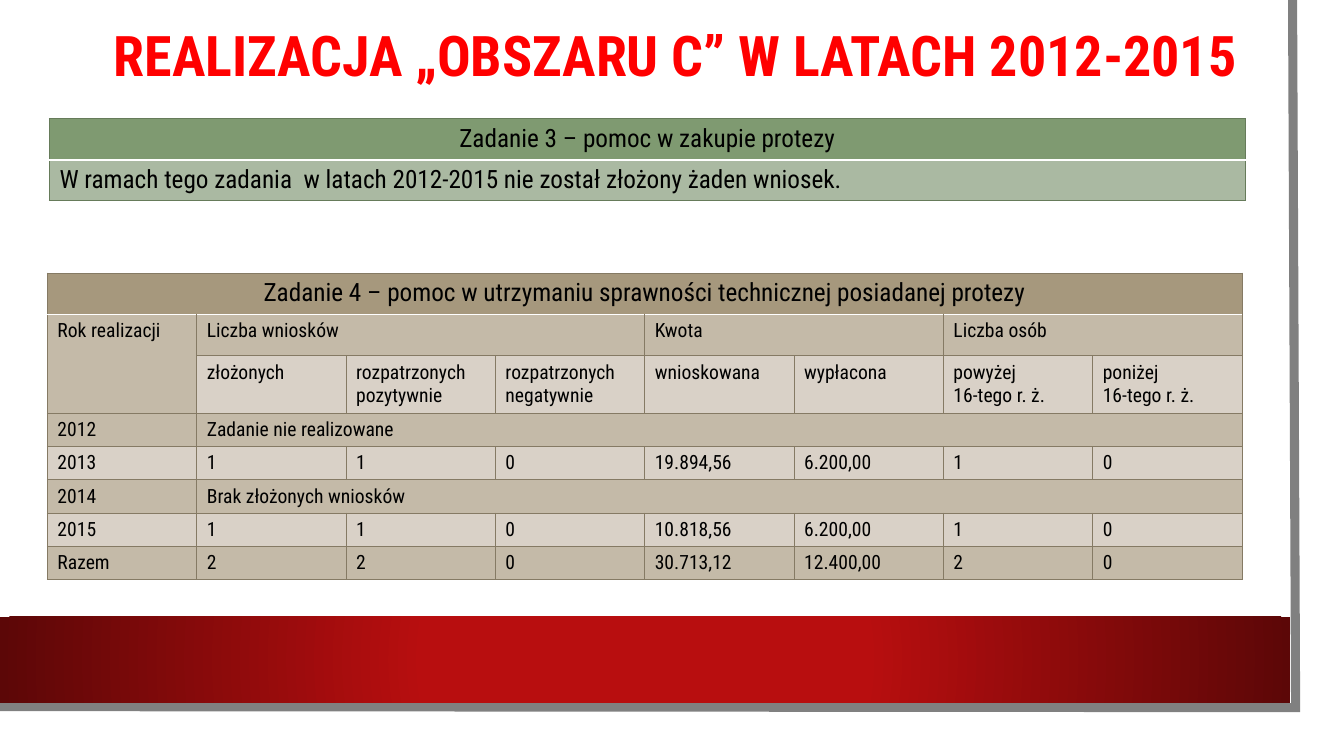
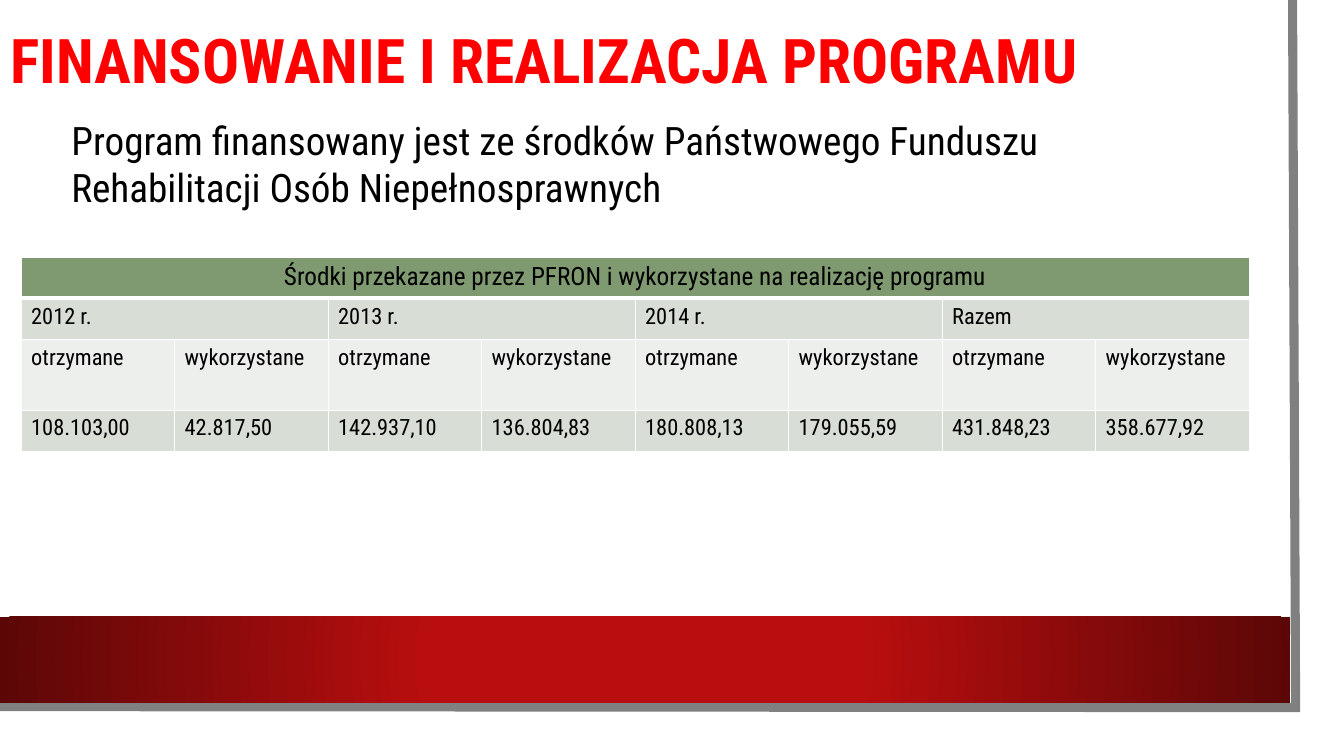
"""Build two slides on the funding and delivery of a rehabilitation programme."""
from dataclasses import dataclass
from typing import Optional

from lxml import etree
from pptx import Presentation
from pptx import slide as sl
from pptx import table as tb
from pptx import text as txt
from pptx import util as u
from pptx.dml import color as clr
from pptx.enum import shapes as shp
from pptx.enum import text as te
from pptx.oxml import ns

Inches = u.Inches
FONT = "Roboto Condensed"
COLORS = {
    "white": "FFFFFF",
    "black": "000000",
    "title": "FF0000",
    "frame": "808080",
    "band": "B80E0F",
    "band_edge": "5C0707",
    "green": "7F9A71",
    "green_line": "667B5A",
    "green_mid": "AAB9A2",
    "green_light": "D8DED5",
    "green_pale": "ECEFEB",
    "sand": "A6987D",
    "sand_line": "857A64",
    "sand_mid": "C4BAA8",
    "sand_light": "D9D1C7",
}

Row = tuple[Optional[str], ...]


@dataclass(frozen=True)
class Box:
    left: float
    top: float
    width: float
    height: float

    def lengths(self) -> tuple[int, ...]:
        return tuple(Inches(v) for v in (self.left, self.top, self.width, self.height))


@dataclass(frozen=True)
class TableSpec:
    """Rows of a table; None continues the cell to the left, or above in the first column."""
    box: Box
    row_heights: tuple[float, ...]
    rows: tuple[Row, ...]
    row_fills: tuple[str, ...]
    border: str
    border_width: float
    header_rule: float
    body_size: int


def rgb(name: str) -> clr.RGBColor:
    return clr.RGBColor.from_string(COLORS[name])


def put_text(frame, content: str, *, size: int, color: str = "black", bold: bool = False,
             align: te.PP_ALIGN = te.PP_ALIGN.LEFT, spacing: Optional[float] = None) -> None:
    frame.word_wrap = True
    frame.text = content
    for paragraph in frame.paragraphs:
        paragraph.alignment = align
        if spacing:
            paragraph.line_spacing = spacing
        for run in paragraph.runs:
            font = run.font
            font.name, font.size, font.bold = FONT, u.Pt(size), bold
            font.color.rgb = rgb(color)


def add_panel(slide: sl.Slide, box: Box):
    panel = slide.shapes.add_shape(shp.MSO_SHAPE.RECTANGLE, *box.lengths())
    panel.shadow.inherit = False
    panel.line.fill.background()
    return panel


def add_frame_line(slide: sl.Slide):
    start, *rest = [(Inches(x), Inches(y)) for x, y in ((12.82, 0), (12.85, 7.02), (-0.03, 7.01))]
    builder = slide.shapes.build_freeform(*start)
    builder.add_line_segments(rest, close=False)
    edge = builder.convert_to_shape()
    edge.shadow.inherit = False
    edge.fill.background()
    edge.line.color.rgb = rgb("frame")
    edge.line.width = u.Pt(6.5)
    outline = edge.element.spPr.find(ns.qn("a:ln"))
    etree.SubElement(outline, ns.qn("a:miter"), lim="800000")
    return edge


def shade_radially(panel, inner: str, outer: str, inner_stop: float) -> None:
    panel.fill.gradient()
    for stop, name, position in zip(panel.fill.gradient_stops, (inner, outer), (inner_stop, 1.0)):
        stop.color.rgb = rgb(name)
        stop.position = position
    gradient = panel.element.spPr.find(ns.qn("a:gradFill"))
    linear = gradient.find(ns.qn("a:lin"))
    radial = etree.Element(ns.qn("a:path"), path="circle")
    etree.SubElement(radial, ns.qn("a:fillToRect"), l="50000", t="50000", r="50000", b="50000")
    gradient.replace(linear, radial)


def decorate_layout(layout: sl.SlideLayout, slide: sl.Slide) -> None:
    page = add_panel(slide, Box(0, 0, 13.1, 7.27))
    page.fill.solid()
    page.fill.fore_color.rgb = rgb("white")
    edge = add_frame_line(slide)
    band = add_panel(slide, Box(0, 6.12, 12.8, 0.85))
    shade_radially(band, "band", "band_edge", 0.34)
    for number, part in enumerate((page, edge, band), start=100):
        part.element.nvSpPr.cNvPr.set("id", str(number))
        layout.shapes.element.append(part.element)


def set_title(slide: sl.Slide, content: str, box: Box, size: int,
              spacing: Optional[float] = None) -> None:
    title = slide.shapes.title
    title.left, title.top, title.width, title.height = box.lengths()
    frame = title.text_frame
    frame.auto_size = te.MSO_AUTO_SIZE.NONE
    frame.vertical_anchor = te.MSO_ANCHOR.MIDDLE
    put_text(frame, content, size=size, color="title", bold=True, spacing=spacing)


def set_borders(cell: tb._Cell, sides: dict[str, tuple[str, float]]) -> None:
    properties = cell._tc.get_or_add_tcPr()
    for index, (side, (name, width)) in enumerate(sides.items()):
        line = etree.Element(ns.qn(f"a:ln{side}"), w=str(u.Pt(width)))
        fill = etree.SubElement(line, ns.qn("a:solidFill"))
        etree.SubElement(fill, ns.qn("a:srgbClr"), val=COLORS[name])
        properties.insert(index, line)


def merge_cells(table: tb.Table, rows: tuple[Row, ...]) -> None:
    for r, row in enumerate(rows):
        if row[0] is None:
            table.cell(r - 1, 0).merge(table.cell(r, 0))
        starts = [c for c, content in enumerate(row) if c == 0 or content is not None]
        for start, end in zip(starts, starts[1:] + [len(row)]):
            if end - start > 1:
                table.cell(r, start).merge(table.cell(r, end - 1))


def add_table(slide: sl.Slide, spec: TableSpec) -> None:
    columns = len(spec.rows[0])
    table = slide.shapes.add_table(len(spec.rows), columns, *spec.box.lengths()).table
    table.first_row = table.horz_banding = False
    for column in table.columns:
        column.width = Inches(spec.box.width / columns)
    plain = (spec.border, spec.border_width)
    rule = ("white", spec.header_rule)
    for r, row in enumerate(spec.rows):
        table.rows[r].height = Inches(spec.row_heights[r])
        for c, content in enumerate(row):
            cell = table.cell(r, c)
            cell.fill.solid()
            cell.fill.fore_color.rgb = rgb(spec.row_fills[r])
            set_borders(cell, {"L": plain, "R": plain, "T": rule if r == 1 else plain,
                               "B": rule if r == 0 else plain})
            if content is not None:
                put_text(cell.text_frame, content, size=spec.body_size if r else 18,
                         align=te.PP_ALIGN.LEFT if r else te.PP_ALIGN.CENTER)
    merge_cells(table, spec.rows)


def spread(*contents: str, span: int) -> Row:
    return tuple(part for content in contents for part in (content, *[None] * (span - 1)))


PROSTHESIS_PURCHASE = TableSpec(
    box=Box(0.49, 1.18, 11.86, 0.81),
    row_heights=(0.41, 0.4),
    rows=(("Zadanie 3 – pomoc w zakupie protezy",),
          ("W ramach tego zadania  w latach 2012-2015 nie został złożony żaden wniosek.",)),
    row_fills=("green", "green_mid"),
    border="green_line", border_width=0.75, header_rule=1.5, body_size=18,
)

PROSTHESIS_UPKEEP = TableSpec(
    box=Box(0.47, 2.71, 11.85, 3.04),
    row_heights=(0.41, 0.41, 0.57) + (0.33,) * 5,
    rows=(
        spread("Zadanie 4 – pomoc w utrzymaniu sprawności technicznej posiadanej protezy", span=8),
        ("Rok realizacji", *spread("Liczba wniosków", span=3),
         *spread("Kwota", "Liczba osób", span=2)),
        (None, "złożonych", "rozpatrzonych pozytywnie", "rozpatrzonych negatywnie",
         "wnioskowana", "wypłacona", "powyżej\n16-tego r. ż.", "poniżej\n16-tego r. ż."),
        ("2012", *spread("Zadanie nie realizowane", span=7)),
        ("2013", "1", "1", "0", "19.894,56", "6.200,00", "1", "0"),
        ("2014", *spread("Brak złożonych wniosków", span=7)),
        ("2015", "1", "1", "0", "10.818,56", "6.200,00", "1", "0"),
        ("Razem", "2", "2", "0", "30.713,12", "12.400,00", "2", "0"),
    ),
    row_fills=("sand",) + ("sand_mid", "sand_light") * 3 + ("sand_mid",),
    border="sand_line", border_width=0.75, header_rule=1.5, body_size=14,
)

PROGRAMME_FUNDS = TableSpec(
    box=Box(0.21, 2.55, 12.18, 1.93),
    row_heights=(0.41, 0.41, 0.7, 0.41),
    rows=(
        spread("Środki przekazane przez PFRON i wykorzystane na realizację programu", span=8),
        spread("2012 r.", "2013 r.", "2014 r.", "Razem", span=2),
        ("otrzymane", "wykorzystane") * 4,
        ("108.103,00", "42.817,50", "142.937,10", "136.804,83",
         "180.808,13", "179.055,59", "431.848,23", "358.677,92"),
    ),
    row_fills=("green", "green_light", "green_pale", "green_light"),
    border="white", border_width=1, header_rule=3, body_size=16,
)


def build_area_slide(slide: sl.Slide) -> None:
    set_title(slide, "REALIZACJA „OBSZARU C” W LATACH 2012-2015", Box(1.03, 0.15, 11.45, 0.77), 40)
    add_table(slide, PROSTHESIS_PURCHASE)
    add_table(slide, PROSTHESIS_UPKEEP)


def build_funding_slide(slide: sl.Slide) -> None:
    set_title(slide, "FINANSOWANIE I REALIZACJA PROGRAMU", Box(0, 0, 11.37, 1.26), 44, spacing=0.9)
    source = slide.shapes.add_textbox(*Box(0.61, 1.1, 11.64, 1.04).lengths())
    put_text(source.text_frame,
             "Program finansowany jest ze środków Państwowego Funduszu "
             "Rehabilitacji Osób Niepełnosprawnych", size=28)
    add_table(slide, PROGRAMME_FUNDS)


def main() -> None:
    deck = Presentation()
    deck.slide_width, deck.slide_height = Inches(13.33), Inches(7.5)
    layout = deck.slide_layouts[5]
    area, funding = (deck.slides.add_slide(layout) for _ in range(2))
    decorate_layout(layout, area)
    build_area_slide(area)
    build_funding_slide(funding)
    deck.save("out.pptx")


if __name__ == "__main__":
    main()
